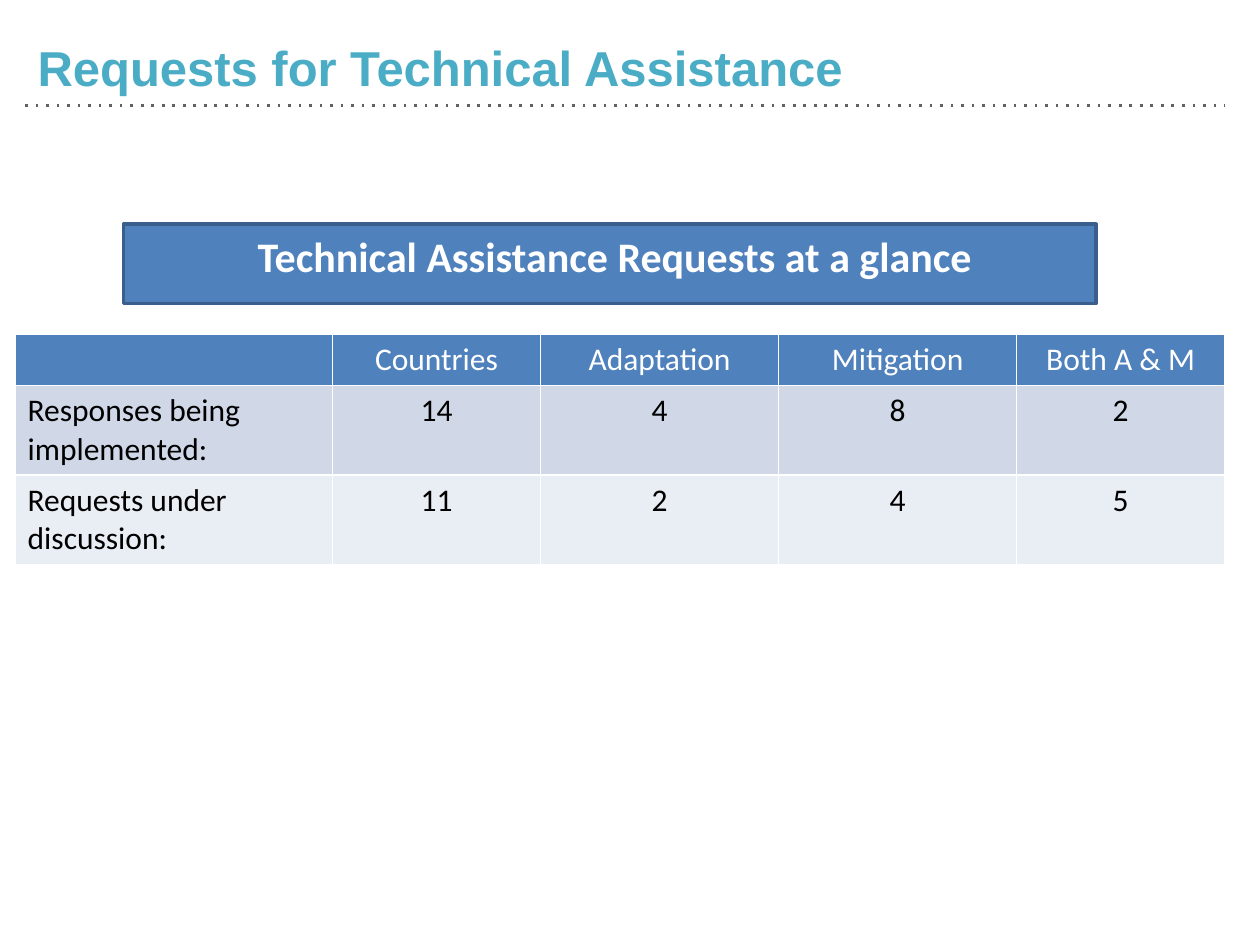
from lxml.etree import SubElement
from pptx import Presentation
from pptx.dml.color import RGBColor
from pptx.enum.shapes import MSO_CONNECTOR, MSO_SHAPE
from pptx.enum.text import MSO_ANCHOR, PP_ALIGN as Align
from pptx.oxml.ns import qn
from pptx.util import Inches, Pt

WHITE = RGBColor(0xFF, 0xFF, 0xFF)
BLACK = RGBColor(0x00, 0x00, 0x00)
TEAL = RGBColor(0x4B, 0xAC, 0xC6)
BLUE = RGBColor(0x4F, 0x81, 0xBD)
DARK_BLUE = RGBColor(0x3A, 0x5F, 0x8C)
GREY = RGBColor(0x61, 0x61, 0x62)
BANDS = (RGBColor(0xD0, 0xD8, 0xE8), RGBColor(0xE9, 0xED, 0xF4))

COLUMNS, ROWS = 100, 75
REQUESTS = (
    ("", "Countries", "Adaptation", "Mitigation", "Both A & M"),
    ("Responses being implemented:", "14", "4", "8", "2"),
    ("Requests under discussion:", "11", "2", "4", "5"),
)
TABLE_WIDTHS = (25.2, 16.5, 18.9, 18.9, 16.5)
TABLE_HEIGHTS = (4.1, 7.1, 7.1)


def write(frame, text, font="Calibri", size=18, color=BLACK, bold=False, align=Align.LEFT):
    paragraph = frame.paragraphs[0]
    paragraph.text = text
    paragraph.alignment = align
    style = paragraph.font
    style.name, style.size, style.bold = font, Pt(size), bold
    style.color.rgb = color


def add_cell_borders(cell, color, width):
    """Draw all four edges; they must come before the fill in the cell XML."""
    properties = cell._tc.get_or_add_tcPr()
    for position, edge in enumerate(("a:lnL", "a:lnR", "a:lnT", "a:lnB")):
        line = SubElement(properties, qn(edge), w=str(Pt(width)))
        fill = SubElement(line, qn("a:solidFill"))
        SubElement(fill, qn("a:srgbClr"), val=str(color))
        properties.insert(position, line)


class SlideBuilder:
    """Places elements on a grid of COLUMNS by ROWS."""

    def __init__(self, presentation):
        self.column = presentation.slide_width / COLUMNS
        self.row = presentation.slide_height / ROWS
        self.slide = presentation.slides.add_slide(presentation.slide_layouts[6])
        self.shapes = self.slide.shapes

    def across(self, columns):
        return round(columns * self.column)

    def down(self, rows):
        return round(rows * self.row)

    def area(self, left, top, width, height):
        return self.across(left), self.down(top), self.across(width), self.down(height)

    def text(self, area, text, **text_format):
        frame = self.shapes.add_textbox(*self.area(*area)).text_frame
        frame.word_wrap = True
        write(frame, text, **text_format)

    def box(self, area, fill, outline, width):
        shape = self.shapes.add_shape(MSO_SHAPE.RECTANGLE, *self.area(*area))
        shape.shadow.inherit = False
        shape.fill.solid()
        shape.fill.fore_color.rgb = fill
        shape.line.color.rgb = outline
        shape.line.width = Pt(width)

    def dotted_rule(self, left, right, top, color, width):
        rule = self.shapes.add_connector(
            MSO_CONNECTOR.STRAIGHT,
            self.across(left), self.down(top), self.across(right), self.down(top))
        rule.line.color.rgb = color
        rule.line.width = Pt(width)
        properties = rule._element.spPr
        SubElement(properties.find(qn("a:ln")), qn("a:prstDash"), val="dot")
        SubElement(properties, qn("a:effectLst"))

    def table(self, left, top, widths, heights, contents):
        area = self.area(left, top, sum(widths), sum(heights))
        table = self.shapes.add_table(len(heights), len(widths), *area).table
        for column, width in zip(table.columns, widths):
            column.width = self.across(width)
        for row, height in zip(table.rows, heights):
            row.height = self.down(height)
        for row_number, texts in enumerate(contents):
            header = row_number == 0
            for column_number, text in enumerate(texts):
                cell = table.cell(row_number, column_number)
                cell.vertical_anchor = MSO_ANCHOR.TOP
                cell.fill.solid()
                cell.fill.fore_color.rgb = BLUE if header else BANDS[(row_number - 1) % 2]
                add_cell_borders(cell, WHITE, 1)
                write(cell.text_frame, text, color=WHITE if header else BLACK,
                      align=Align.CENTER if column_number else Align.LEFT)


def main():
    presentation = Presentation()
    presentation.slide_width, presentation.slide_height = Inches(10), Inches(7.5)
    builder = SlideBuilder(presentation)
    builder.dotted_rule(2, 97.2, 8.4, GREY, 1.5)
    builder.table(1.2, 26.5, TABLE_WIDTHS, TABLE_HEIGHTS, REQUESTS)
    builder.text((2, 2.5, 96.1, 7.5), "Requests for Technical Assistance",
                 font="Arial", size=28, color=TEAL, bold=True)
    builder.box((9.8, 17.8, 77.2, 6.3), BLUE, DARK_BLUE, 2)
    builder.text((10.6, 17.8, 76.4, 5), "Technical Assistance Requests at a glance",
                 size=24, color=WHITE, bold=True, align=Align.CENTER)
    presentation.save("out.pptx")


if __name__ == "__main__":
    main()
